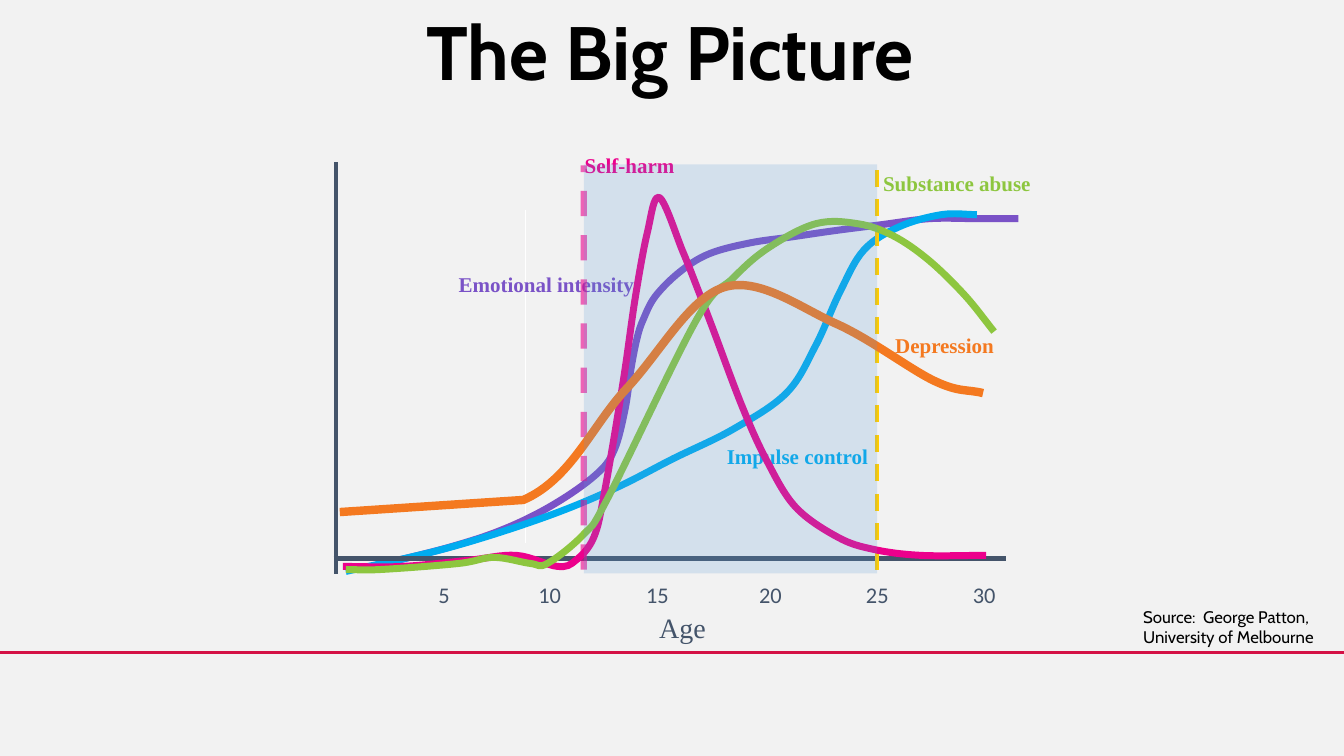
from pptx import Presentation
from pptx.dml.color import RGBColor
from pptx.enum.dml import MSO_LINE
from pptx.enum.shapes import MSO_CONNECTOR, MSO_SHAPE
from pptx.enum.text import MSO_ANCHOR, MSO_AUTO_SIZE, PP_ALIGN
from pptx.oxml.ns import qn
from pptx.oxml.xmlchemy import OxmlElement
from pptx.util import Inches, Pt

CELL = Inches(1)
COLUMNS, ROWS = 13.33, 7.5
BACKGROUND = RGBColor(0xF2, 0xF2, 0xF2)
BLACK = RGBColor(0, 0, 0)
WHITE = RGBColor(0xFF, 0xFF, 0xFF)
CRIMSON = RGBColor(0xD4, 0x11, 0x45)
SLATE = RGBColor(0x44, 0x54, 0x6A)
PURPLE = RGBColor(0x7A, 0x52, 0xC7)
CYAN = RGBColor(0x00, 0xAC, 0xEF)
MAGENTA = RGBColor(0xEC, 0x00, 0x8C)
YELLOW = RGBColor(0xFF, 0xCC, 0x00)
GREEN = RGBColor(0x8D, 0xC6, 0x3F)
ORANGE = RGBColor(0xF4, 0x79, 0x20)
BLUE = RGBColor(0x5B, 0x9B, 0xD5)

EMOTIONAL_INTENSITY = [
    (3.78, 5.6), (4.49, 5.42), (5.02, 5.24), (5.5, 5), (5.91, 4.71), (6.09, 4.47),
    (6.2, 4.06), (6.26, 3.65), (6.32, 3.35), (6.38, 3.17), (6.5, 2.94), (6.74, 2.7),
    (7.03, 2.52), (7.44, 2.41), (7.86, 2.35), (8.27, 2.29), (8.74, 2.23),
    (9.22, 2.17), (9.69, 2.17), (10.1, 2.17)]
IMPULSE_CONTROL = [
    (3.43, 5.67), (4.43, 5.44), (5.38, 5.14), (6.09, 4.85), (6.68, 4.55), (7.27, 4.26),
    (7.8, 3.9), (8.09, 3.43), (8.33, 2.9), (8.57, 2.48), (8.92, 2.25), (9.34, 2.13),
    (9.69, 2.13)]
SELF_HARM = [
    (3.4, 5.62), (3.99, 5.62), (4.64, 5.56), (5.12, 5.51), (5.53, 5.62), (5.71, 5.56),
    (5.89, 5.33), (6, 4.86), (6.18, 3.79), (6.3, 2.96), (6.42, 2.31), (6.54, 1.96),
    (6.77, 2.49), (6.89, 2.79), (7.07, 3.26), (7.36, 4.03), (7.6, 4.56), (7.89, 5.03),
    (8.31, 5.33), (8.66, 5.45), (9.13, 5.51), (9.78, 5.51)]
SUBSTANCE_ABUSE = [
    (3.43, 5.65), (3.78, 5.65), (4.55, 5.59), (4.9, 5.53), (5.26, 5.59), (5.43, 5.59),
    (5.79, 5.3), (6.03, 4.94), (6.91, 3.17), (7.27, 2.76), (7.62, 2.46), (8.09, 2.22),
    (8.51, 2.22), (8.86, 2.34), (9.21, 2.58), (9.57, 2.93), (9.86, 3.29)]
DEPRESSION = [
    (3.37, 5.08), (5.19, 4.96), (6.21, 3.86), (7.18, 2.85), (8.29, 3.21), (9.27, 3.78),
    (9.75, 3.9)]
AGE_COLUMNS = {5: 4.25, 10: 5.24, 15: 6.31, 20: 7.43, 25: 8.49, 30: 9.55}


def grid(*cells):
    return [int(cell * CELL) for cell in cells]


def set_opacity(shape, percent):
    for color in shape._element.spPr.iter(qn("a:srgbClr")):
        alpha = OxmlElement("a:alpha")
        alpha.set("val", str(percent * 1000))
        color.append(alpha)


def add_line(page, ends, color, width, dash=None):
    line = page.shapes.add_connector(MSO_CONNECTOR.STRAIGHT, *grid(*ends))
    line.line.color.rgb = color
    line.line.width = Pt(width)
    if dash:
        line.line.dash_style = dash
    line._element.spPr.append(OxmlElement("a:effectLst"))
    return line


def between(start, end, share):
    return tuple(a + (b - a) * share for a, b in zip(start, end))


def spline(anchors, straight_start):
    points = []
    last = len(anchors) - 2
    for index in range(last + 1):
        start, end = anchors[index:index + 2]
        first, second = between(start, end, 1 / 3), between(start, end, 2 / 3)
        if index > 0:
            before = anchors[index - 1]
            first = tuple(s + (e - b) / 6 for s, e, b in zip(start, end, before))
        if index < last and not (straight_start and index == 0):
            after = anchors[index + 2]
            second = tuple(e - (a - s) / 6 for s, e, a in zip(start, end, after))
        points += [first, second, end]
    return points


def add_curve(page, anchors, color, width=5, straight_start=False):
    builder = page.shapes.build_freeform(*grid(*anchors[0]))
    points = spline(anchors, straight_start)
    builder.add_line_segments([grid(*point) for point in points], close=False)
    curve = builder.convert_to_shape()
    outline = next(curve._element.iter(qn("a:path")))
    segments = outline.findall(qn("a:lnTo"))
    for index in range(0, len(segments), 3):
        bezier = OxmlElement("a:cubicBezTo")
        outline.append(bezier)
        for segment in segments[index:index + 3]:
            bezier.append(segment[0])
            outline.remove(segment)
    curve.fill.background()
    curve.line.color.rgb = color
    curve.line.width = Pt(width)
    curve.shadow.inherit = False


def set_font(para, name, size, color, bold=False):
    para.font.name = name
    para.font.size = Pt(size)
    para.font.color.rgb = color
    para.font.bold = bold


def add_label(page, text, area, name, size, color, bold=False, wrap=False):
    box = page.shapes.add_textbox(*grid(*area))
    box.text_frame.word_wrap = wrap
    para = box.text_frame.paragraphs[0]
    para.text = text
    set_font(para, name, size, color, bold)


def add_curve_label(page, text, left, top, width, color):
    add_label(page, text, (left, top, width, 0.35), "Times New Roman", 15, color, True)


def set_title(page, text):
    title = page.shapes.title
    title.left, title.top, title.width, title.height = grid(-0.02, 0.15, COLUMNS, 0.69)
    frame = title.text_frame
    frame.margin_left = frame.margin_right = frame.margin_top = frame.margin_bottom = 0
    frame.vertical_anchor = MSO_ANCHOR.TOP
    frame.auto_size = MSO_AUTO_SIZE.NONE
    frame.word_wrap = True
    para = frame.paragraphs[0]
    para.text = text
    para.alignment = PP_ALIGN.CENTER
    para.line_spacing = 0.9
    set_font(para, "Cabin", 54, BLACK, True)


def add_age_band(page):
    band = page.shapes.add_shape(MSO_SHAPE.RECTANGLE, *grid(5.79, 1.63, 2.91, 4.06))
    band.shadow.inherit = False
    band.fill.solid()
    band.fill.fore_color.rgb = BLUE
    band.line.fill.background()
    set_opacity(band, 20)


def main():
    deck = Presentation()
    deck.slide_width, deck.slide_height = grid(COLUMNS, ROWS)
    page = deck.slides.add_slide(deck.slide_layouts[5])
    page.background.fill.solid()
    page.background.fill.fore_color.rgb = BACKGROUND
    set_title(page, "The Big Picture")
    add_line(page, (0, 6.47, COLUMNS, 6.47), CRIMSON, 2.25)
    add_line(page, (5.21, 2.08, 5.21, 5.39), WHITE, 0.75)
    add_curve(page, EMOTIONAL_INTENSITY, PURPLE)
    add_curve(page, IMPULSE_CONTROL, CYAN)
    add_line(page, (3.33, 5.69, 3.33, 1.61), SLATE, 3)
    add_line(page, (3.31, 5.54, 9.98, 5.54), SLATE, 3)
    for age, left in AGE_COLUMNS.items():
        add_label(page, str(age), (left, 5.72, 0.51, 0.37), "Calibri", 16, SLATE)
    add_curve_label(page, "Emotional intensity", 4.45, 2.64, 2.32, PURPLE)
    add_curve_label(page, "Impulse control", 7.11, 4.35, 2.32, CYAN)
    puberty = add_line(page, (5.79, 5.65, 5.79, 1.64), MAGENTA, 4.5, MSO_LINE.DASH)
    set_opacity(puberty, 59)
    add_line(page, (8.7, 5.65, 8.7, 1.64), YELLOW, 3, MSO_LINE.DASH)
    add_label(page, "Age", (6.44, 6.01, 0.9, 0.44), "Times New Roman", 20, SLATE)
    add_curve_label(page, "Depression", 8.78, 3.25, 1.5, ORANGE)
    add_curve(page, SELF_HARM, MAGENTA)
    add_curve_label(page, "Self-harm", 5.7, 1.46, 1.5, MAGENTA)
    add_curve(page, SUBSTANCE_ABUSE, GREEN)
    add_curve_label(page, "Substance abuse", 8.66, 1.64, 1.67, GREEN)
    add_curve(page, DEPRESSION, ORANGE, 6, straight_start=True)
    add_age_band(page)
    add_label(page, "Source:  George Patton, University of Melbourne",
              (11.24, 5.97, 2.07, 0.5), "Cabin", 12, BLACK, wrap=True)
    deck.save("out.pptx")


if __name__ == "__main__":
    main()
